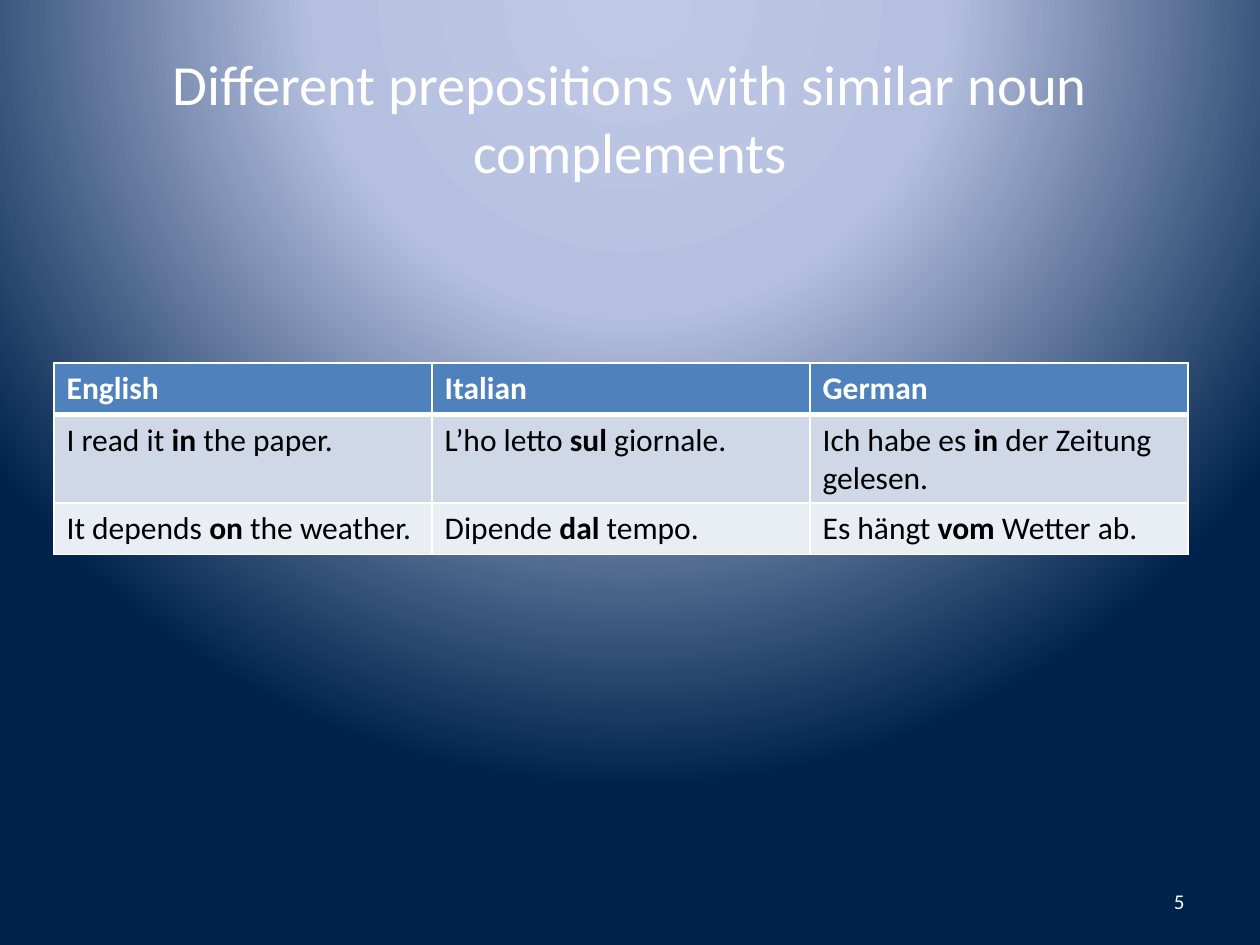
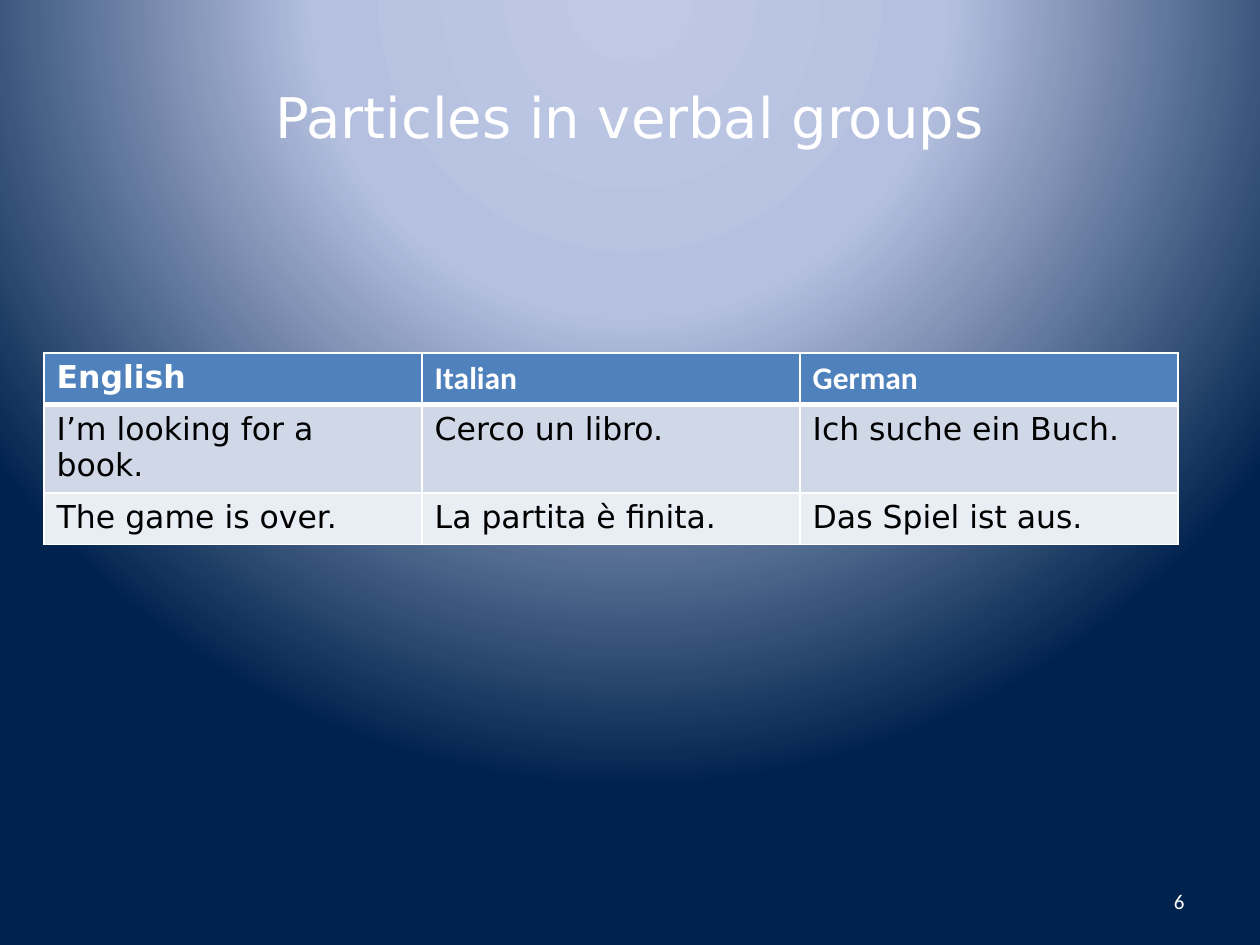
from pptx import Presentation
from pptx.dml.color import RGBColor
from pptx.enum.text import MSO_ANCHOR as Anchor, PP_ALIGN as Align
from pptx.oxml import parse_xml
from pptx.util import Cm, Pt

NS = 'xmlns:a="http://schemas.openxmlformats.org/drawingml/2006/main"'
SANS, DEJA = "Calibri", "DejaVu Sans"
WHITE, BLACK, BLUE = "FFFFFF", "000000", "4F81BD"
BANDS = ["D0D8E8", "E9EDF4"]
GLOW = [(0, "BFC9E5"), (40, "B5C0E0"), (100, "00234D")]
HEADS = ["English", "Italian", "German"]
TITLE_BOX = (1.27, 0.76, 22.86, 3.18)
PAGE_BOX = (18.21, 17.65, 5.92, 1.02)
COL, ROW = 7.62, 1.04

SLIDES = [
    {
        "title": "Different prepositions with similar noun complements",
        "size": 32.4, "font": SANS, "heads": [SANS] * 3,
        "spot": (1.09, 7.32), "page": 5,
        "rows": [
            ["I read it *in *the paper.", "L’ho letto *sul* giornale.",
             "Ich habe es *in *der Zeitung gelesen."],
            ["It depends *on* the weather.", "Dipende *dal* tempo.",
             "Es hängt *vom *Wetter ab."],
        ],
    },
    {
        "title": "Particles in verbal groups",
        "size": 32, "font": DEJA, "heads": [DEJA, SANS, SANS],
        "spot": (0.89, 7.12), "page": 6,
        "rows": [
            ["I’m looking for a book.", "Cerco un libro.", "Ich suche ein Buch."],
            ["The game is over.", "La partita è finita.", "Das Spiel ist aus."],
        ],
    },
]


def paint(item, tone):
    """Give a fill or a font the colour of a hex string."""
    if hasattr(item, "solid"):
        item.solid()
        item.fore_color.rgb = RGBColor.from_string(tone)
    else:
        item.color.rgb = RGBColor.from_string(tone)


def apply(item, look):
    """Set each attribute named in a dict of format values."""
    for key, value in look.items():
        setattr(item, key, value)


def write(frame, text, font, size, tone, align=Align.LEFT, bold=False):
    """Write one paragraph in which asterisks switch bold on and off."""
    para = frame.paragraphs[0]
    para.alignment = align
    for turn, part in enumerate(text.split("*")):
        run = para.add_run()
        run.text = part
        apply(run.font, {"name": font, "size": Pt(size), "bold": bold or turn % 2 == 1})
        paint(run.font, tone)


def label(slide, box, text, font, size, align):
    """Place a white, vertically centred text box."""
    frame = slide.shapes.add_textbox(*map(Cm, box)).text_frame
    apply(frame, {"word_wrap": True, "vertical_anchor": Anchor.MIDDLE})
    write(frame, text, font, size, WHITE, align)


def edge(cell, top, base):
    """Draw white borders around a cell, with top and base widths in points."""
    props = cell._tc.get_or_add_tcPr()
    for spot, (side, width) in enumerate(zip("LRTB", (1, 1, top, base))):
        props.insert(spot, parse_xml(
            f'<a:ln{side} {NS} w="{Pt(width)}"><a:solidFill>'
            f'<a:srgbClr val="{WHITE}"/></a:solidFill></a:ln{side}>'))


def grid(slide, spot, rows, font, heads):
    """Place the three-language table with its top left corner at spot."""
    tall, wide = len(rows) + 1, len(HEADS)
    box = (*spot, wide * COL, tall * ROW)
    table = slide.shapes.add_table(tall, wide, *map(Cm, box)).table
    for row in table.rows:
        row.height = Cm(ROW)
    for y, texts in enumerate([HEADS, *rows]):
        head = y == 0
        for x, text in enumerate(texts):
            cell = table.cell(y, x)
            paint(cell.fill, BLUE if head else BANDS[(y - 1) % 2])
            edge(cell, 3 if y == 1 else 1, 3 if head else 1)
            write(cell.text_frame, text, heads[x] if head else font, 18,
                  WHITE if head else BLACK, bold=head)


def glow(master):
    """Give the master a round light that shines from above the slide."""
    fill = master.background.fill
    fill.solid()
    stops = "".join(f'<a:gs pos="{pos * 1000}"><a:srgbClr val="{tone}"/></a:gs>'
                    for pos, tone in GLOW)
    old = next(master._element.iter("{*}solidFill"))
    old.getparent().replace(old, parse_xml(
        f'<a:gradFill {NS} rotWithShape="1"><a:gsLst>{stops}</a:gsLst>'
        '<a:path path="circle"><a:fillToRect l="50000" t="-80000" '
        'r="50000" b="180000"/></a:path></a:gradFill>'))


def build(deck, data):
    """Add one slide with its title, table and page number."""
    slide = deck.slides.add_slide(deck.slide_layouts[6])
    label(slide, TITLE_BOX, data["title"], data["font"], data["size"], Align.CENTER)
    grid(slide, data["spot"], data["rows"], data["font"], data["heads"])
    label(slide, PAGE_BOX, str(data["page"]), SANS, 12, Align.RIGHT)


def main():
    """Build the deck and save it."""
    deck = Presentation()
    apply(deck, {"slide_width": Cm(25.4), "slide_height": Cm(19.05)})
    glow(deck.slide_master)
    for data in SLIDES:
        build(deck, data)
    deck.save("out.pptx")


if __name__ == "__main__":
    main()
